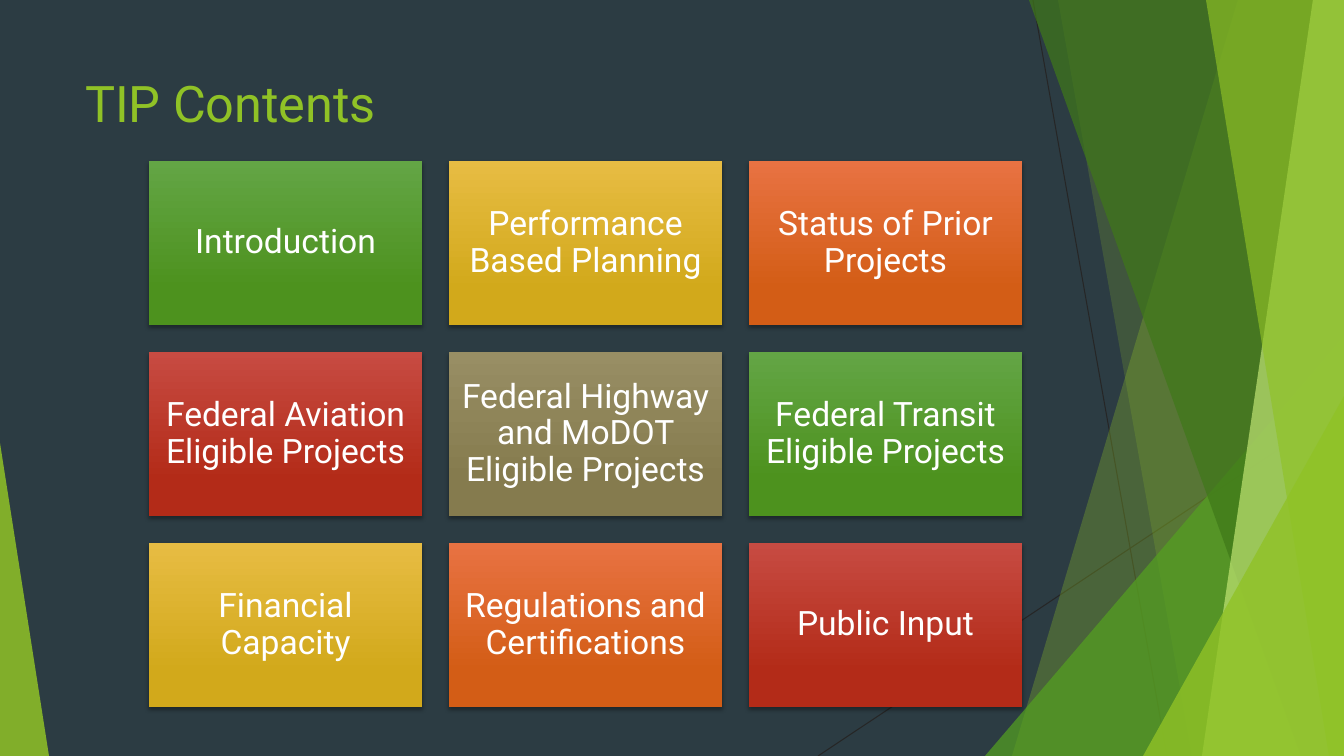
from lxml.etree import SubElement
from pptx import Presentation
from pptx.dml.color import RGBColor
from pptx.enum.shapes import MSO_CONNECTOR, MSO_SHAPE
from pptx.enum.text import MSO_ANCHOR, PP_ALIGN
from pptx.oxml.ns import qn
from pptx.util import Emu, Pt

COLORS = {
    "background": "2C3C43",
    "thin line": "262626",
    "lime": "90C226",
    "green": "54A021",
    "dark green": "3F7819",
    "pale lime": "C0E474",
    "white": "FFFFFF",
    "shadow": "000000",
}
CARD_GRADIENTS = {
    "green": ("63A545", "4D921E"),
    "gold": ("E7BC43", "D2A91B"),
    "orange": ("E87242", "D35D16"),
    "red": ("C74B42", "B32B18"),
    "olive": ("988E64", "857B4E"),
}
WIDTH, HEIGHT = 1344, 756
THIN_LINES = [(1033, 0, 1167, 756), (1344, 406, 818, 756)]
CARDS = [
    ("Introduction", "green"),
    ("Performance Based Planning", "gold"),
    ("Status of Prior Projects", "orange"),
    ("Federal Aviation Eligible Projects", "red"),
    ("Federal Highway and MoDOT Eligible Projects", "olive"),
    ("Federal Transit Eligible Projects", "green"),
    ("Financial Capacity", "gold"),
    ("Regulations and Certifications", "orange"),
    ("Public Input", "red"),
]


class SlideBuilder:
    """Hold the style and the current slide, and draw each kind of element."""

    font = "Roboto"
    scale = 12192000 / WIDTH

    def __init__(self, slide):
        self.slide = slide
        background = slide.background.fill
        background.solid()
        background.fore_color.rgb = self.color("background")

    def color(self, name):
        return RGBColor.from_string(COLORS[name])

    def px(self, *lengths):
        return [Emu(round(length * self.scale)) for length in lengths]

    def add_run(self, paragraph, text, size, color):
        run = paragraph.add_run()
        run.text = text
        run.font.name = self.font
        run.font.size = Pt(size)
        run.font.color.rgb = self.color(color)

    def title(self, text, left, top, width, height):
        title = self.slide.shapes.title
        title.left, title.top, title.width, title.height = self.px(left, top, width, height)
        title.text_frame.vertical_anchor = MSO_ANCHOR.TOP
        paragraph = title.text_frame.paragraphs[0]
        paragraph.alignment = PP_ALIGN.LEFT
        self.add_run(paragraph, text, 36, "lime")
        title.element.getparent().append(title.element)

    def thin_line(self, *ends):
        line = self.slide.shapes.add_connector(MSO_CONNECTOR.STRAIGHT, *self.px(*ends))
        line.line.color.rgb = self.color("thin line")
        line.line.width = Pt(0.75)
        SubElement(line.element.spPr, qn("a:effectLst"))

    def tint(self, shape, color, opacity):
        shape.fill.solid()
        shape.fill.fore_color.rgb = self.color(color)
        shape.line.fill.background()
        shape.shadow.inherit = False
        color_element = shape.element.spPr.find(qn("a:solidFill"))[0]
        SubElement(color_element, qn("a:alpha")).set("val", str(opacity * 1000))

    def ribbon(self, top_x, bottom_x, color, opacity):
        builder = self.slide.shapes.build_freeform(top_x, 0, scale=self.scale)
        builder.add_line_segments([(WIDTH, 0), (WIDTH, HEIGHT), (bottom_x, HEIGHT)])
        self.tint(builder.convert_to_shape(), color, opacity)

    def triangle(self, left, top, width, apex, color, opacity):
        box = self.px(left, top, width, HEIGHT - top)
        shape = self.slide.shapes.add_shape(MSO_SHAPE.ISOSCELES_TRIANGLE, *box)
        shape.adjustments[0] = apex
        self.tint(shape, color, opacity)

    def card(self, text, gradient, left, top, width, height):
        box = self.px(left, top, width, height)
        shape = self.slide.shapes.add_shape(MSO_SHAPE.RECTANGLE, *box)
        shape.fill.gradient()
        shape.fill.gradient_angle = 270
        stops = zip(shape.fill.gradient_stops, (0, 0.78), CARD_GRADIENTS[gradient])
        for stop, position, color in stops:
            stop.position = position
            stop.color.rgb = RGBColor.from_string(color)
        shape.line.fill.background()
        self.drop_shadow(shape)

        frame = shape.text_frame
        frame.word_wrap = True
        frame.vertical_anchor = MSO_ANCHOR.MIDDLE
        frame.margin_left, frame.margin_top, frame.margin_right, frame.margin_bottom = self.px(*[10] * 4)
        paragraph = frame.paragraphs[0]
        paragraph.alignment = PP_ALIGN.CENTER
        paragraph.line_spacing = 0.9
        self.add_run(paragraph, text, 24, "white")

    def drop_shadow(self, shape):
        shape.shadow.inherit = False
        effects = shape.element.spPr.find(qn("a:effectLst"))
        shadow = SubElement(effects, qn("a:outerShdw"))
        settings = {"blurRad": Pt(3), "dist": Pt(2), "dir": 90 * 60000, "rotWithShape": 0}
        for name, value in settings.items():
            shadow.set(name, str(int(value)))
        color = SubElement(shadow, qn("a:srgbClr"))
        color.set("val", COLORS["shadow"])
        SubElement(color, qn("a:alpha")).set("val", "35000")


def main():
    presentation = Presentation()
    presentation.slide_width, presentation.slide_height = Emu(12192000), Emu(6858000)
    builder = SlideBuilder(presentation.slides.add_slide(presentation.slide_layouts[5]))

    for ends in THIN_LINES:
        builder.thin_line(*ends)
    builder.ribbon(1238, 1012, "lime", 30)
    builder.ribbon(1058, 1192, "lime", 20)
    builder.triangle(985, 336, 359, 1, "green", 72)
    builder.ribbon(1029, 1301, "dark green", 70)
    builder.ribbon(1313, 1202, "pale lime", 70)
    builder.ribbon(1206, 1329, "lime", 65)
    builder.triangle(1143, 396, 201, 1, "lime", 80)
    builder.triangle(0, 443, 49, 0, "lime", 85)

    builder.title("TIP Contents", 75, 67, 947, 145)
    for index, (text, gradient) in enumerate(CARDS):
        row, column = divmod(index, 3)
        builder.card(text, gradient, 149 + 300 * column, 161 + 191 * row, 273, 164)

    presentation.save("out.pptx")


if __name__ == "__main__":
    main()
